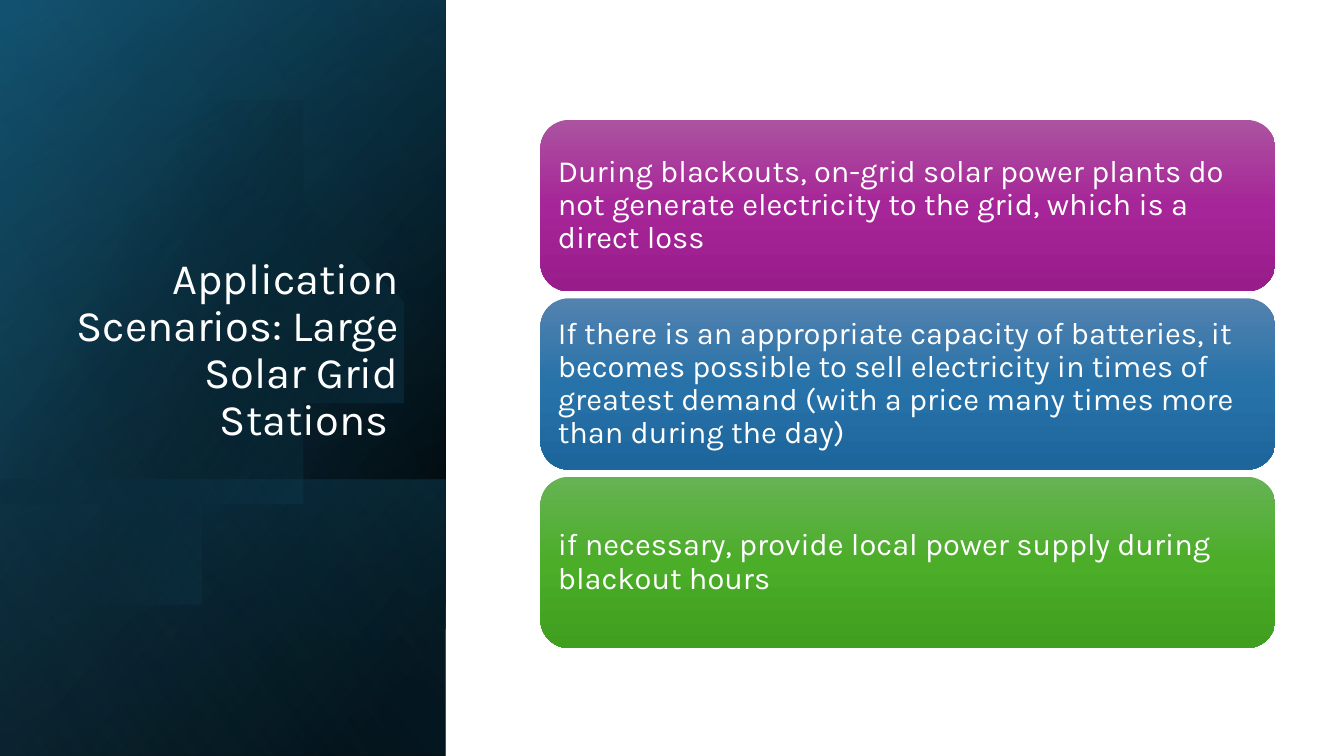
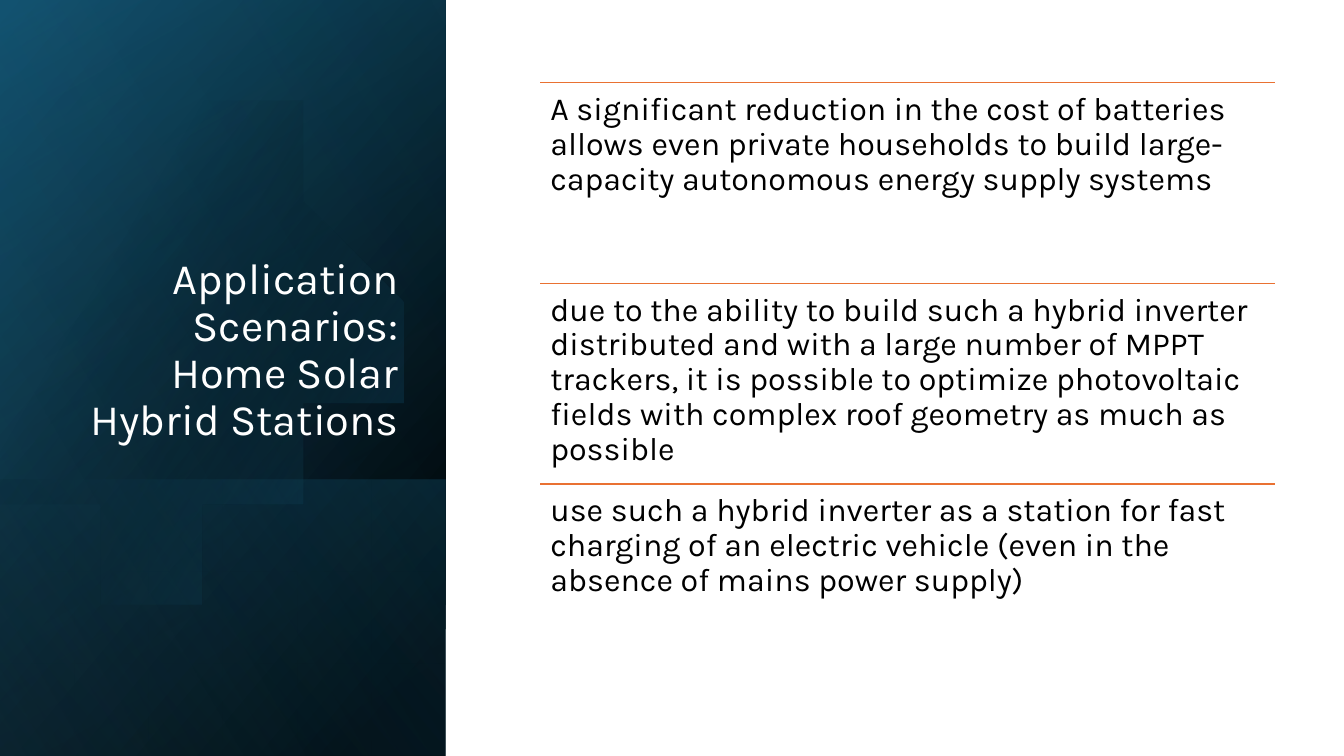
import lxml.etree
import pptx
import pptx.dml.color
import pptx.enum.shapes
import pptx.enum.text
import pptx.oxml.ns
import pptx.util

Inches = pptx.util.Inches
SHAPES = pptx.enum.shapes.MSO_SHAPE
ANCHOR = pptx.enum.text.MSO_ANCHOR
ALIGN = pptx.enum.text.PP_ALIGN
qn = pptx.oxml.ns.qn

# Content
CARDS_TITLE = "Application Scenarios: Large Solar Grid Stations "
CARDS = [
    ("During blackouts, on-grid solar power plants do not generate electricity "
     "to the grid, which is a direct loss", "purple"),
    ("If there is an appropriate capacity of batteries, it becomes possible to "
     "sell electricity in times of greatest demand (with a price many times "
     "more than during the day)", "blue"),
    ("if necessary, provide local power supply during blackout hours", "green"),
]
ROWS_TITLE = "Application Scenarios: Home Solar Hybrid Stations"
ROWS = [
    "A significant reduction in the cost of batteries allows even private "
    "households to build large-capacity autonomous energy supply systems",
    "due to the ability to build such a hybrid inverter distributed and with a "
    "large number of MPPT trackers, it is possible to optimize photovoltaic "
    "fields with complex roof geometry as much as possible",
    "use such a hybrid inverter as a station for fast charging of an electric "
    "vehicle (even in the absence of mains power supply)",
]

# Shared style
FONT = "Karla"
COLORS = {
    "white": "FFFFFF", "black": "000000", "navy": "104862", "teal": "156082",
    "sky": "46B1E1", "rule": "E97132",
    "purple top": "AC53A0", "purple": "A62598", "purple bottom": "991C8B",
    "blue top": "5382AF", "blue": "2772A9", "blue bottom": "1D669C",
    "green top": "66B354", "green": "4BAD28", "green bottom": "409F1E",
}
SLIDE_WIDTH, SLIDE_HEIGHT = 13.33, 7.5
PANEL_WIDTH = 4.42
BAND_HEIGHT = 2.74
BODY_LEFT, BODY_WIDTH = 5.36, 7.29

# Panel layers: (position, stops as (percent, colour, opacity), angle)
FULL_PANEL = (0, 0, PANEL_WIDTH, SLIDE_HEIGHT)
LOWER_BAND = (0, SLIDE_HEIGHT - BAND_HEIGHT, PANEL_WIDTH, BAND_HEIGHT)
LAYERS_BELOW_DISC = [
    (FULL_PANEL, [(8, "black", 100), (100, "navy", 100)], 220),
    (FULL_PANEL, [(0, "black", 0), (99, "teal", 46)], 240),
    (LOWER_BAND, [(2, "teal", 29), (100, "black", 30)], 140),
]
LAYER_ABOVE_DISC = (FULL_PANEL, [(0, "black", 0), (99, "sky", 11)], 150)

# Disc outline, cut off by the left edge: start, then Bezier segments
DISC_START = (1.49, 1.1)
DISC_RIGHT = [
    ((2.46, 1.12), (3.35, 1.77), (3.63, 2.75)),
    ((3.98, 3.97), (3.28, 5.23), (2.07, 5.58)),
    ((1.31, 5.8), (0.53, 5.61), (-0.03, 5.14)),
]
DISC_CUT = [(-0.15, 5.03), (-0.15, 1.75), (0, 1.61)]
DISC_TOP = [
    ((0.23, 1.42), (0.5, 1.28), (0.8, 1.19)),
    ((1.03, 1.13), (1.26, 1.1), (1.49, 1.1)),
]
DISC_STOPS = [(29, "black", 0), (100, "teal", 43)]


def color(name):
    return pptx.dml.color.RGBColor.from_string(COLORS[name])


def fill_gradient(shape, stops, angle):
    """Give the shape a linear gradient with per-stop opacity."""
    shape.shadow.inherit = False
    shape.line.fill.background()
    shape.fill.gradient()
    gradient = shape._element.spPr.find(qn("a:gradFill"))
    for child in list(gradient):
        gradient.remove(child)
    stop_list = lxml.etree.SubElement(gradient, qn("a:gsLst"))
    for percent, name, opacity in stops:
        stop = lxml.etree.SubElement(stop_list, qn("a:gs"), pos=str(percent * 1000))
        tint = lxml.etree.SubElement(stop, qn("a:srgbClr"), val=COLORS[name])
        if opacity < 100:
            lxml.etree.SubElement(tint, qn("a:alpha"), val=str(opacity * 1000))
    lxml.etree.SubElement(gradient, qn("a:lin"), ang=str(angle * 60000), scaled="0")


def add_gradient_shape(slide, kind, position, stops, angle):
    shape = slide.shapes.add_shape(kind, *map(Inches, position))
    fill_gradient(shape, stops, angle)
    return shape


def write_text(shape, text, size, name, insets, anchor, align=ALIGN.LEFT):
    frame = shape.text_frame
    frame.word_wrap = True
    frame.vertical_anchor = anchor
    frame.margin_left = frame.margin_right = Inches(insets[0])
    frame.margin_top = frame.margin_bottom = Inches(insets[1])
    paragraph = frame.paragraphs[0]
    paragraph.text = text
    paragraph.alignment = align
    paragraph.line_spacing = 0.9
    paragraph.font.name = FONT
    paragraph.font.size = pptx.util.Pt(size)
    paragraph.font.color.rgb = color(name)


def bezier_points(start, segments, steps=24):
    points = []
    for first, second, end in segments:
        for step in range(1, steps + 1):
            t = step / steps
            weights = ((1 - t) ** 3, 3 * t * (1 - t) ** 2, 3 * t * t * (1 - t), t ** 3)
            corners = (start, first, second, end)
            points.append(tuple(sum(w * corner[axis] for w, corner in zip(weights, corners))
                                for axis in (0, 1)))
        start = end
    return points


def add_disc(slide):
    outline = (bezier_points(DISC_START, DISC_RIGHT) + DISC_CUT
               + bezier_points(DISC_CUT[-1], DISC_TOP))
    outline = [(max(x, 0), y) for x, y in outline]
    builder = slide.shapes.build_freeform(*DISC_START, scale=Inches(1))
    builder.add_line_segments(outline, close=True)
    fill_gradient(builder.convert_to_shape(), DISC_STOPS, 30)


def add_titled_slide(presentation, title):
    """Blank slide with the dark side panel and its title."""
    slide = presentation.slides.add_slide(presentation.slide_layouts[6])
    for layer in LAYERS_BELOW_DISC:
        add_gradient_shape(slide, SHAPES.RECTANGLE, *layer)
    add_disc(slide)
    add_gradient_shape(slide, SHAPES.RECTANGLE, *LAYER_ABOVE_DISC)
    box = slide.shapes.add_textbox(*map(Inches, (0.64, 1.84, 3.41, 2.62)))
    write_text(box, title, 31, "white", (0.1, 0.05), ANCHOR.BOTTOM, ALIGN.RIGHT)
    return slide


def add_cards(slide, cards, top=1.19, height=1.7, gap=0.07):
    for index, (text, hue) in enumerate(cards):
        position = (BODY_LEFT, top + index * (height + gap), BODY_WIDTH, height)
        stops = [(0, hue + " top", 100), (50, hue, 100), (100, hue + " bottom", 100)]
        card = add_gradient_shape(slide, SHAPES.ROUNDED_RECTANGLE, position, stops, 90)
        write_text(card, text, 22, "white", (0.09, 0.09), ANCHOR.MIDDLE)


def add_ruled_rows(slide, rows, top=0.82, height=1.99):
    for index, text in enumerate(rows):
        y = Inches(top + index * height)
        left, width = Inches(BODY_LEFT), Inches(BODY_WIDTH)
        rule = slide.shapes.add_connector(
            pptx.enum.shapes.MSO_CONNECTOR.STRAIGHT, left, y, left + width, y)
        rule.line.color.rgb = color("rule")
        rule.line.width = pptx.util.Pt(1)
        lxml.etree.SubElement(rule._element.spPr, qn("a:effectLst"))
        box = slide.shapes.add_textbox(left, y, width, Inches(height))
        write_text(box, text, 23, "black", (0.1, 0.1), ANCHOR.TOP)


def main():
    presentation = pptx.Presentation()
    presentation.slide_width = Inches(SLIDE_WIDTH)
    presentation.slide_height = Inches(SLIDE_HEIGHT)
    add_cards(add_titled_slide(presentation, CARDS_TITLE), CARDS)
    add_ruled_rows(add_titled_slide(presentation, ROWS_TITLE), ROWS)
    presentation.save("out.pptx")


if __name__ == "__main__":
    main()
